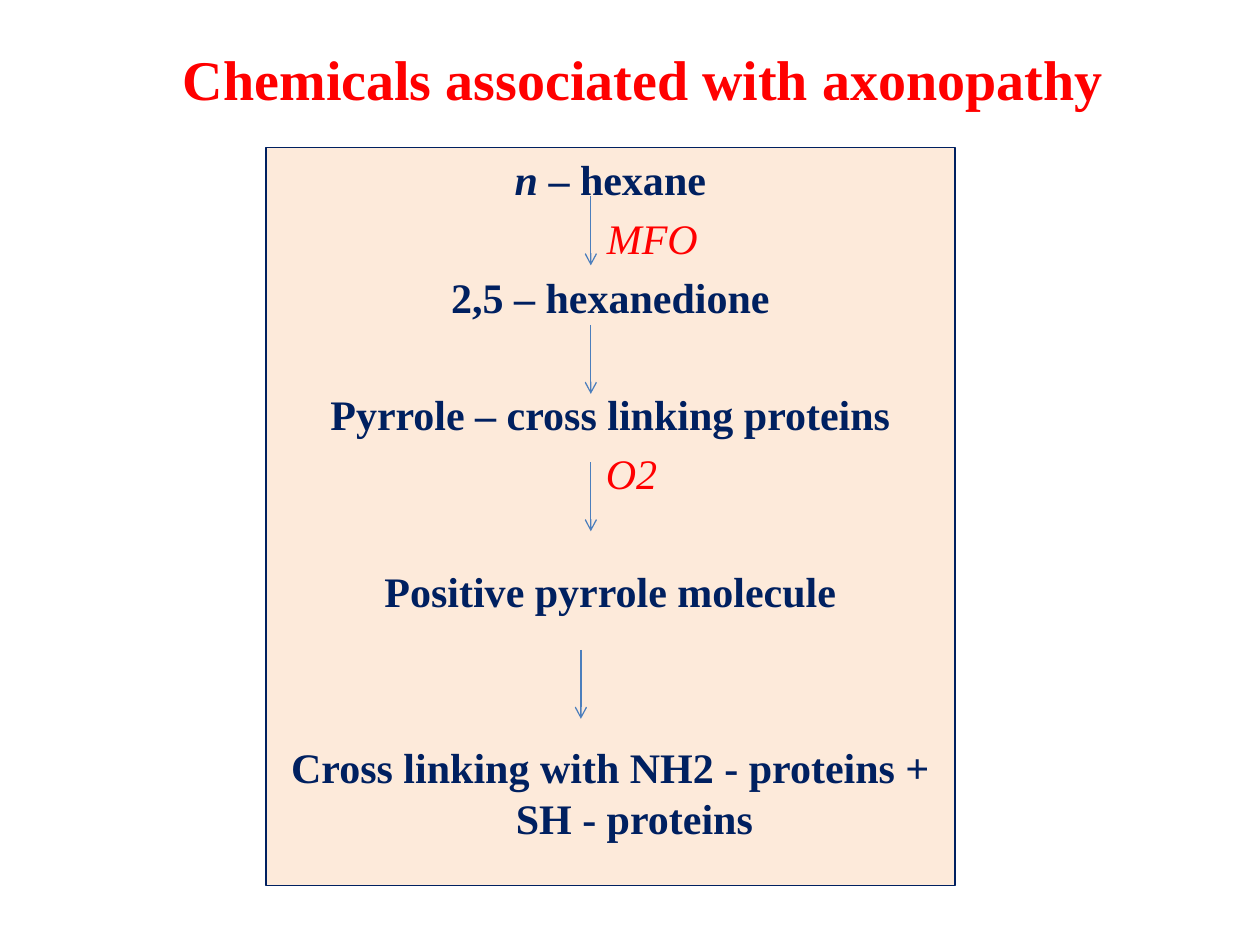
from dataclasses import dataclass
from lxml import etree
from pptx import Presentation
from pptx import util as u
from pptx.dml.color import RGBColor as Rgb
from pptx.enum import shapes, text
from pptx.oxml import ns


@dataclass(frozen=True)
class Theme:
    """Colours, font and type sizes in points."""
    font: str = "Times New Roman"
    red: str = "FF0000"
    navy: str = "002060"
    peach: str = "FDEADA"
    blue: str = "4B7EBC"
    head: float = 32
    size: float = 24
    lead: float = 28.8
    gap: float = 4.8
    rule: float = 0.75


T = Theme()
ROW = T.lead + T.gap
MAIN = dict(color=T.navy, bold=True)
NOTE = dict(color=T.red, italic=True)
HANG = (0.97, -0.97)
STEPS = [
    ([("n", dict(MAIN, italic=True)), (" – hexane", MAIN)], 0, HANG),
    ([("MFO", NOTE)], 0, (1.69, 0)),
    ([("2,5 – hexanedione", MAIN)], 0, HANG),
    ([("Pyrrole – cross linking proteins", MAIN)], 1, HANG),
    ([("O2", NOTE)], 0, (0.85, 0)),
    ([("Positive pyrrole molecule", MAIN)], 1, HANG),
    ([("Cross linking with NH2 - proteins + SH - proteins", MAIN)], 2, HANG),
]
ARROWS = [(6.55, 0.99), (6.55, 3.58), (6.55, 6.35), (6.35, 10.13)]
REACH = 1.39


def write(para, words, size=T.size, color=T.navy, bold=False, italic=False):
    """Add a formatted run to a paragraph."""
    run = para.add_run()
    run.text = words
    font = run.font
    font.name, font.size = T.font, u.Pt(size)
    font.bold, font.italic = bold, italic
    font.color.rgb = Rgb.from_string(color)


def place(shape, box):
    """Move a shape to a box given in centimetres."""
    shape.left, shape.top, shape.width, shape.height = map(u.Cm, box)
    shape.text_frame.auto_size = text.MSO_AUTO_SIZE.NONE
    shape.text_frame.word_wrap = True


def title(slide, box):
    """Set the heading."""
    head = slide.shapes.title
    place(head, box)
    head.text_frame.margin_left = u.Cm(0.53)
    head.text_frame.vertical_anchor = text.MSO_ANCHOR.MIDDLE
    para = head.text_frame.paragraphs[0]
    para.alignment = text.PP_ALIGN.CENTER
    write(para, "Chemicals associated with axonopathy",
          size=T.head, color=T.red, bold=True)


def arrow(slide, x, y):
    """Draw a downward arrow from a point."""
    line = slide.shapes.add_connector(
        shapes.MSO_CONNECTOR.STRAIGHT, *map(u.Cm, (x, y, x, y + REACH)))
    line.line.color.rgb = Rgb.from_string(T.blue)
    line.line.width = u.Pt(T.rule)
    etree.SubElement(line.line._get_or_add_ln(), ns.qn("a:tailEnd"), type="arrow")
    etree.SubElement(line._element.spPr, ns.qn("a:effectLst"))


def pathway(slide, box):
    """Fill the panel with the reaction steps and their arrows."""
    panel = slide.placeholders[1]
    place(panel, box)
    panel.fill.solid()
    panel.fill.fore_color.rgb = Rgb.from_string(T.peach)
    panel.line.color.rgb = Rgb.from_string(T.navy)
    panel.line.width = u.Pt(T.rule)
    frame = panel.text_frame
    for i, (runs, skip, (left, first)) in enumerate(STEPS):
        para = frame.add_paragraph() if i else frame.paragraphs[0]
        para.alignment = text.PP_ALIGN.CENTER
        para.line_spacing = u.Pt(T.lead)
        para.space_before = u.Pt(T.gap + skip * ROW)
        props = para._p.get_or_add_pPr()
        props.set("marL", str(u.Cm(left)))
        props.set("indent", str(u.Cm(first)))
        etree.SubElement(props, ns.qn("a:buNone"))
        for words, look in runs:
            write(para, words, **look)
    for x, y in ARROWS:
        arrow(slide, box[0] + x, box[1] + y)


def main():
    """Build and save the slide."""
    deck = Presentation()
    deck.slide_width, deck.slide_height = u.Cm(25.4), u.Cm(19.05)
    slide = deck.slides.add_slide(deck.slide_layouts[1])
    title(slide, (1.4, 0.58, 22.86, 2.01))
    pathway(slide, (5.36, 2.97, 13.89, 14.88))
    deck.save("out.pptx")


if __name__ == "__main__":
    main()
